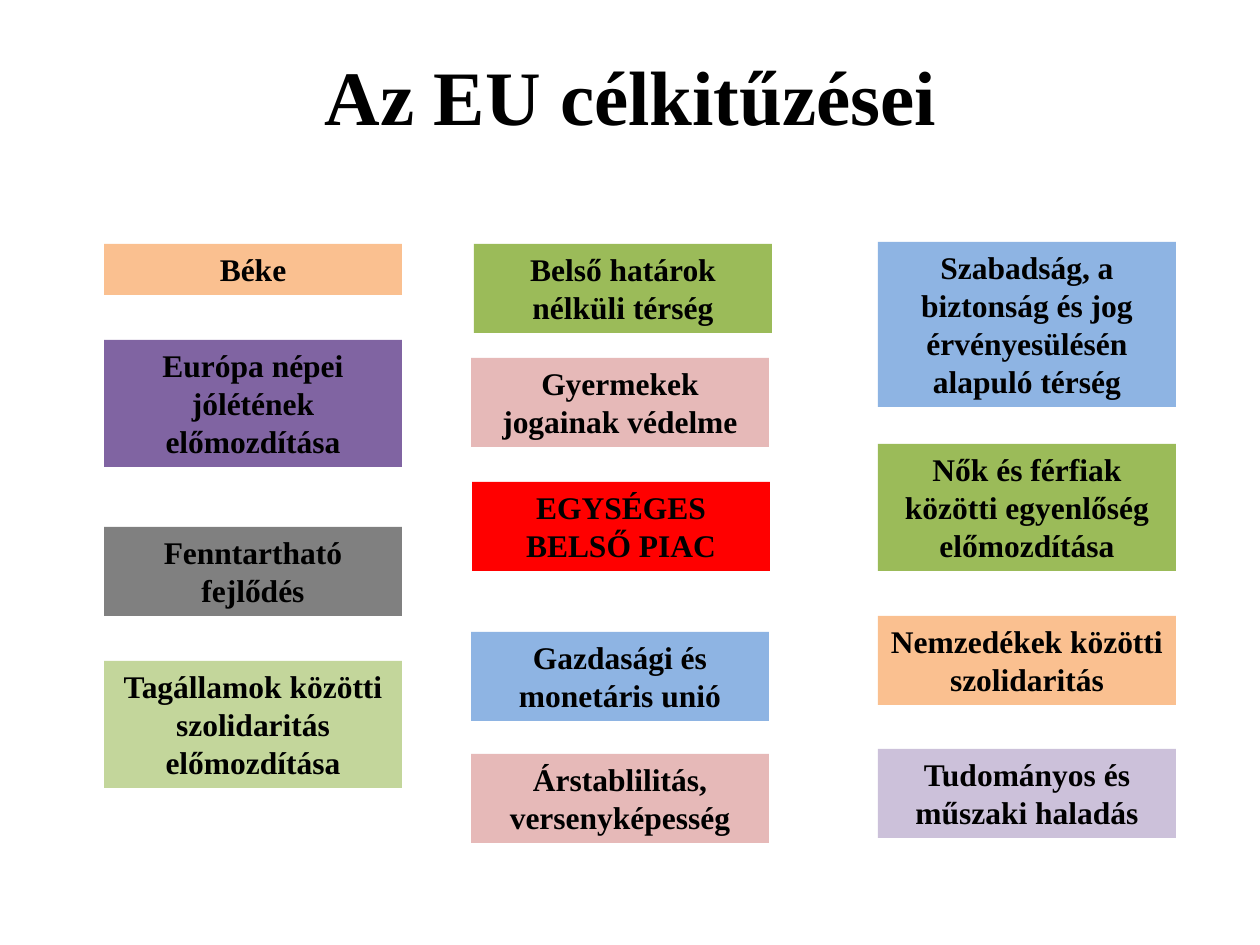
from pptx import Presentation
from pptx.dml.color import RGBColor
from pptx.enum.text import MSO_ANCHOR, MSO_AUTO_SIZE, PP_ALIGN
from pptx.util import Pt

BLACK = RGBColor(0x00, 0x00, 0x00)
ORANGE = RGBColor(0xFA, 0xC0, 0x90)
PURPLE = RGBColor(0x80, 0x64, 0xA2)
LILAC = RGBColor(0xCC, 0xC1, 0xDA)
GREEN = RGBColor(0x9B, 0xBB, 0x59)
LIGHT_GREEN = RGBColor(0xC3, 0xD6, 0x9B)
BLUE = RGBColor(0x8E, 0xB4, 0xE3)
GRAY = RGBColor(0x80, 0x80, 0x80)
RED = RGBColor(0xFF, 0x00, 0x00)
PINK = RGBColor(0xE6, 0xB9, 0xB8)

TITLE = "Az EU célkitűzései"
# (left, top, line count, fill, text)
GOALS = [
    (104, 244, 1, ORANGE, "Béke"),
    (104, 340, 3, PURPLE, "Európa népei jólétének előmozdítása"),
    (104, 527, 2, GRAY, "Fenntartható fejlődés"),
    (104, 661, 3, LIGHT_GREEN, "Tagállamok közötti szolidaritás előmozdítása"),
    (474, 244, 2, GREEN, "Belső határok nélküli térség"),
    (471, 358, 2, PINK, "Gyermekek jogainak védelme"),
    (472, 482, 2, RED, "EGYSÉGES BELSŐ PIAC"),
    (471, 632, 2, BLUE, "Gazdasági és monetáris unió"),
    (471, 754, 2, PINK, "Árstablilitás, versenyképesség"),
    (878, 242, 4, BLUE, "Szabadság, a biztonság és jog érvényesülésén alapuló térség"),
    (878, 444, 3, GREEN, "Nők és férfiak közötti egyenlőség előmozdítása"),
    (878, 616, 2, ORANGE, "Nemzedékek közötti szolidaritás"),
    (878, 749, 2, LILAC, "Tudományos és műszaki haladás"),
]
GOAL_WIDTH = 298
LINE_HEIGHT = 38
GOAL_PADDING = 13


def px(length):
    return round(length * 914400 / 126)


def write(shape, text, size):
    frame = shape.text_frame
    frame.word_wrap = True
    frame.text = text
    paragraph = frame.paragraphs[0]
    paragraph.alignment = PP_ALIGN.CENTER
    font = paragraph.font
    font.name = "Times New Roman"
    font.size = Pt(size)
    font.bold = True
    font.color.rgb = BLACK
    return frame


def add_title(slide):
    title = slide.shapes.title
    title.left, title.top = px(64), px(16)
    title.width, title.height = px(1134), px(158)
    write(title, TITLE, 44).vertical_anchor = MSO_ANCHOR.MIDDLE


def add_goal(slide, left, top, lines, fill, text):
    height = GOAL_PADDING + LINE_HEIGHT * lines
    box = slide.shapes.add_textbox(px(left), px(top), px(GOAL_WIDTH), px(height))
    box.fill.solid()
    box.fill.fore_color.rgb = fill
    write(box, text, 18).auto_size = MSO_AUTO_SIZE.SHAPE_TO_FIT_TEXT


def main():
    presentation = Presentation()
    presentation.slide_width, presentation.slide_height = px(1260), px(945)
    slide = presentation.slides.add_slide(presentation.slide_layouts[5])
    add_title(slide)
    for goal in GOALS:
        add_goal(slide, *goal)
    presentation.save("out.pptx")


if __name__ == "__main__":
    main()
